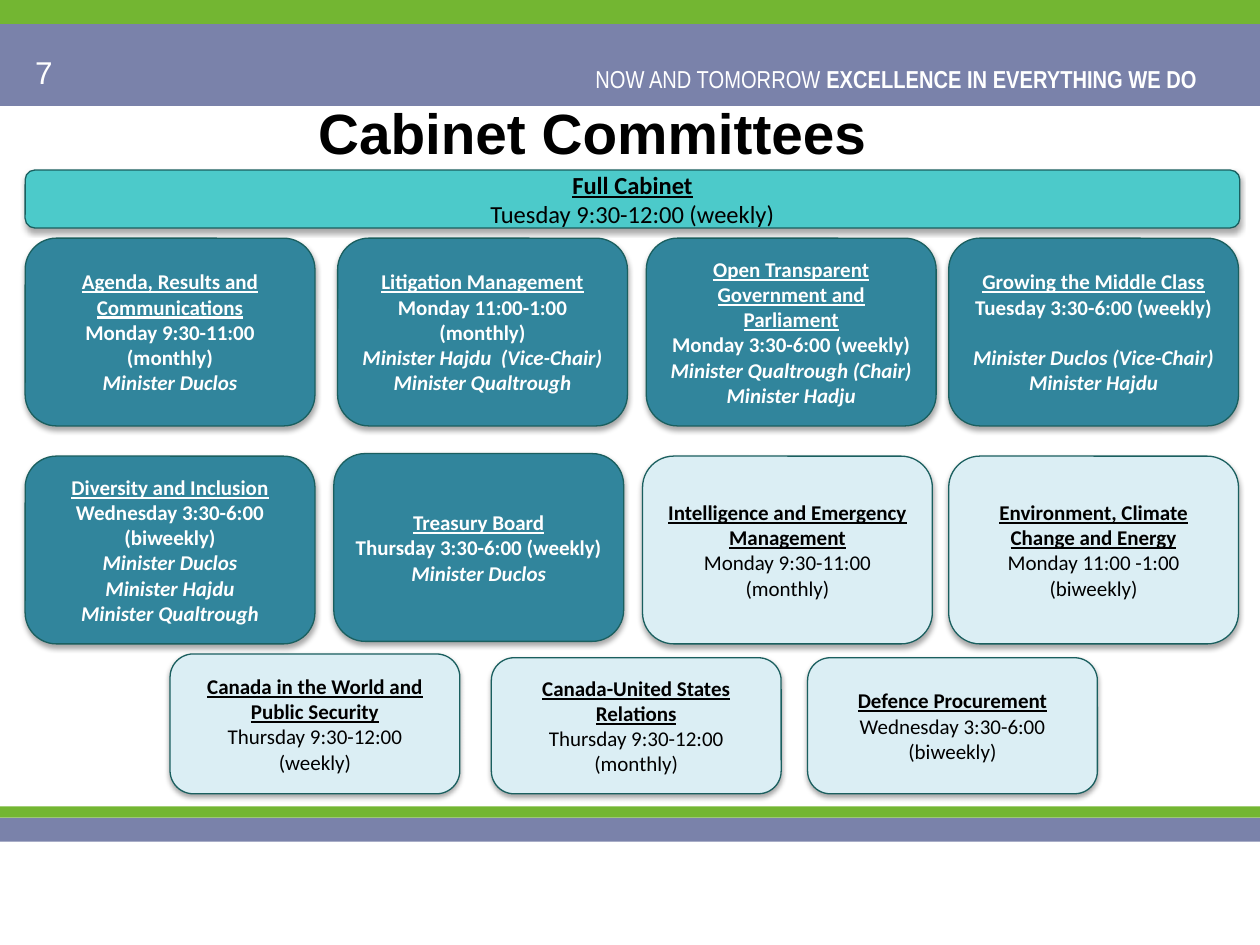
from pptx import Presentation
from pptx.dml.color import RGBColor
from pptx.enum.shapes import MSO_SHAPE as Shape
from pptx.enum.text import MSO_ANCHOR as Anchor, PP_ALIGN as Align
from pptx.oxml import parse_xml
from pptx.oxml.ns import nsdecls
from pptx.util import Inches, Pt

WHITE = RGBColor(0xFF, 0xFF, 0xFF)
BLACK = RGBColor(0x00, 0x00, 0x00)
GREEN = RGBColor(0x73, 0xB6, 0x32)
PURPLE = RGBColor(0x7A, 0x82, 0xAA)
TEAL = RGBColor(0x31, 0x85, 0x9C)
TURQUOISE = RGBColor(0x4C, 0xCA, 0xCA)
PALE_BLUE = RGBColor(0xDB, 0xEE, 0xF4)
OUTLINE = RGBColor(0x1A, 0x5F, 0x5F)

CARD_WIDTH = 2.3
CARD_HEIGHT = 1.49
LINE_GAP = 14.6

BANDS = [
    (0.19, 0.65, PURPLE),
    (0, 0.19, GREEN),
    (6.49, 0.19, PURPLE),
    (6.4, 0.09, GREEN),
]

MINISTER_CARDS = [
    (0.2, 1.89, "Agenda, Results and Communications",
     ["Monday 9:30-11:00", "(monthly)"], ["Minister Duclos"], 0),
    (2.68, 1.89, "Litigation Management",
     ["Monday 11:00-1:00 (monthly)"],
     ["Minister Hajdu  (Vice-Chair)", "Minister Qualtrough"], 0),
    (5.13, 1.89, "Open Transparent Government and Parliament",
     ["Monday 3:30-6:00 (weekly)"],
     ["Minister Qualtrough (Chair)", "Minister Hadju"], 0),
    (7.53, 1.89, "Growing the Middle Class",
     ["Tuesday 3:30-6:00 (weekly)"],
     ["Minister Duclos (Vice-Chair)", "Minister Hajdu"], LINE_GAP),
    (0.2, 3.62, "Diversity and Inclusion",
     ["Wednesday 3:30-6:00 (biweekly)"],
     ["Minister Duclos", "Minister Hajdu", "Minister Qualtrough"], 0),
    (2.65, 3.6, "Treasury Board",
     ["Thursday 3:30-6:00 (weekly)"], ["Minister Duclos"], 0),
]

OTHER_CARDS = [
    (5.1, 3.62, CARD_HEIGHT, "Intelligence and Emergency Management",
     "Monday 9:30-11:00 (monthly)"),
    (7.53, 3.62, CARD_HEIGHT, "Environment, Climate Change and Energy",
     "Monday 11:00 -1:00 (biweekly)"),
    (1.35, 5.19, 1.11, "Canada in the World and Public Security",
     "Thursday 9:30-12:00 (weekly)"),
    (3.9, 5.22, 1.08, "Canada-United States Relations",
     "Thursday 9:30-12:00 (monthly)"),
    (6.41, 5.22, 1.08, "Defence Procurement",
     "Wednesday 3:30-6:00 (biweekly)"),
]


def set_font(font, name, size, color, bold=False, italic=False, underline=False):
    font.name = name
    font.size = Pt(size)
    font.color.rgb = color
    font.bold = bold
    font.italic = italic
    font.underline = underline


def add_band(slide, top, height, color):
    band = slide.shapes.add_shape(
        Shape.RECTANGLE, 0, Inches(top), Inches(10), Inches(height))
    band.shadow.inherit = False
    band.fill.solid()
    band.fill.fore_color.rgb = color
    band.line.fill.background()


def add_label(slide, left, top, width, height, runs, size, name, align):
    box = slide.shapes.add_textbox(
        Inches(left), Inches(top), Inches(width), Inches(height))
    box.text_frame.word_wrap = True
    paragraph = box.text_frame.paragraphs[0]
    paragraph.alignment = align
    for text, bold in runs:
        run = paragraph.add_run()
        run.text = text
        set_font(run.font, name, size, WHITE, bold)


def add_title(slide, text):
    title = slide.shapes.title
    title.left, title.top = Inches(0.2), Inches(0.73)
    title.width, title.height = Inches(9), Inches(0.63)
    title.text_frame.text = text
    title.text_frame.vertical_anchor = Anchor.MIDDLE
    paragraph = title.text_frame.paragraphs[0]
    paragraph.alignment = Align.CENTER
    set_font(paragraph.font, "Arial", 32.4, BLACK, bold=True)


def add_soft_shadow(shape):
    shape.shadow.inherit = False
    effects = shape._element.spPr.find(
        "{http://schemas.openxmlformats.org/drawingml/2006/main}effectLst")
    effects.append(parse_xml(
        f'<a:outerShdw {nsdecls("a")} blurRad="{Pt(3.1)}" dist="{Pt(1.8)}" '
        'dir="5400000" rotWithShape="0"><a:srgbClr val="000000">'
        '<a:alpha val="35000"/></a:srgbClr></a:outerShdw>'))


def add_card(slide, left, top, width, height, fill, color, size, name, times,
             ministers=(), gap=0):
    card = slide.shapes.add_shape(
        Shape.ROUNDED_RECTANGLE,
        Inches(left), Inches(top), Inches(width), Inches(height))
    card.fill.solid()
    card.fill.fore_color.rgb = fill
    card.line.color.rgb = OUTLINE
    card.line.width = Pt(0.75)
    add_soft_shadow(card)
    frame = card.text_frame
    frame.word_wrap = True
    frame.vertical_anchor = Anchor.MIDDLE
    frame.text = "\n".join([name, *times, *ministers])
    first_minister = 1 + len(times)
    for index, paragraph in enumerate(frame.paragraphs):
        paragraph.alignment = Align.CENTER
        set_font(paragraph.font, "Calibri", size, color,
                 bold=index == 0 or bool(ministers),
                 italic=index >= first_minister, underline=index == 0)
        if gap and index == first_minister:
            paragraph.space_before = Pt(gap)


def main():
    presentation = Presentation()
    presentation.slide_width = Inches(10)
    presentation.slide_height = Inches(7.5)
    slide = presentation.slides.add_slide(presentation.slide_layouts[5])

    for top, height, color in BANDS:
        add_band(slide, top, height, color)
    add_label(slide, 4.6, 0.46, 5, 0.34,
              [("NOW AND TOMORROW ", False),
               ("EXCELLENCE IN EVERYTHING WE DO", True)],
              14, "Arial Narrow", Align.RIGHT)
    add_label(slide, 0.18, 0.37, 2.33, 0.4, [("7", False)], 18, "Arial", Align.LEFT)
    add_title(slide, "Cabinet Committees")

    add_card(slide, 0.2, 1.35, 9.64, 0.46, TURQUOISE, BLACK, 14,
             "Full Cabinet", ["Tuesday 9:30-12:00 (weekly)"])
    for left, top, name, times, ministers, gap in MINISTER_CARDS:
        add_card(slide, left, top, CARD_WIDTH, CARD_HEIGHT, TEAL, WHITE, 12,
                 name, times, ministers, gap)
    for left, top, height, name, time in OTHER_CARDS:
        add_card(slide, left, top, CARD_WIDTH, height, PALE_BLUE, BLACK, 12,
                 name, [time])

    presentation.save("out.pptx")


if __name__ == "__main__":
    main()
